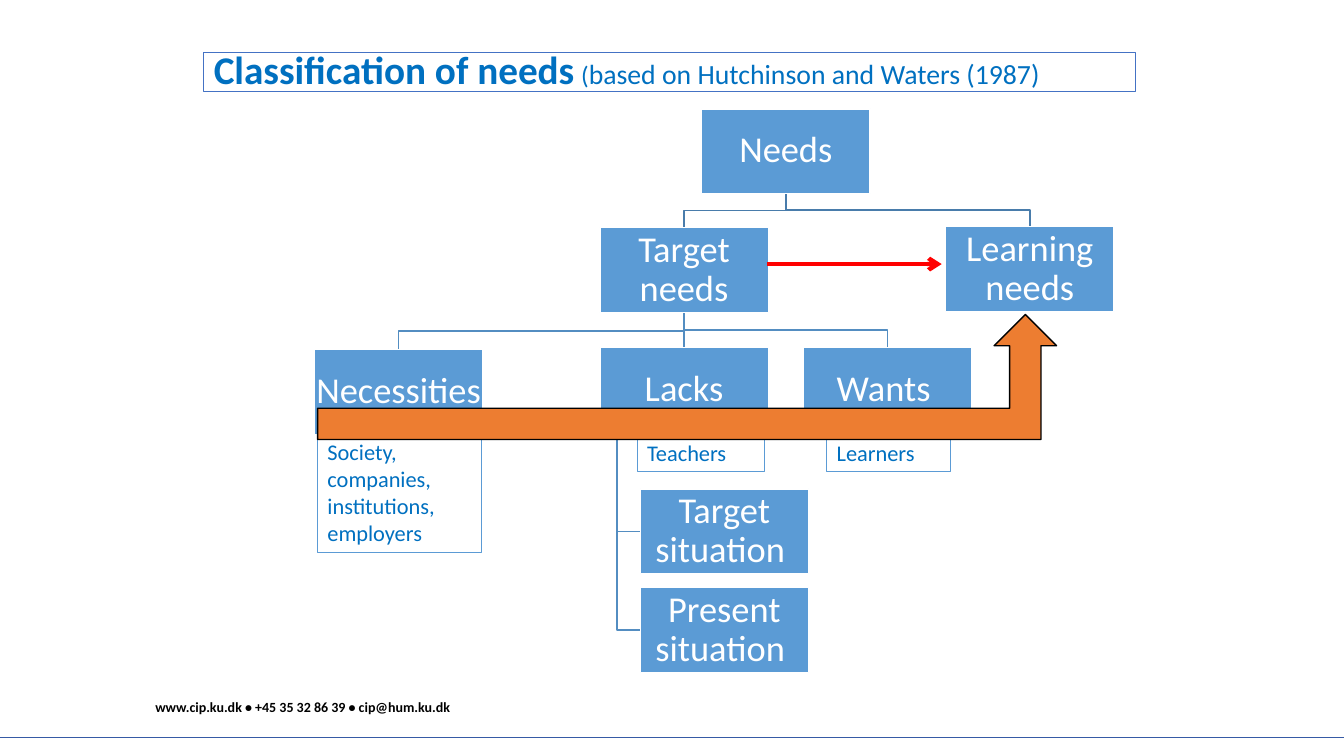
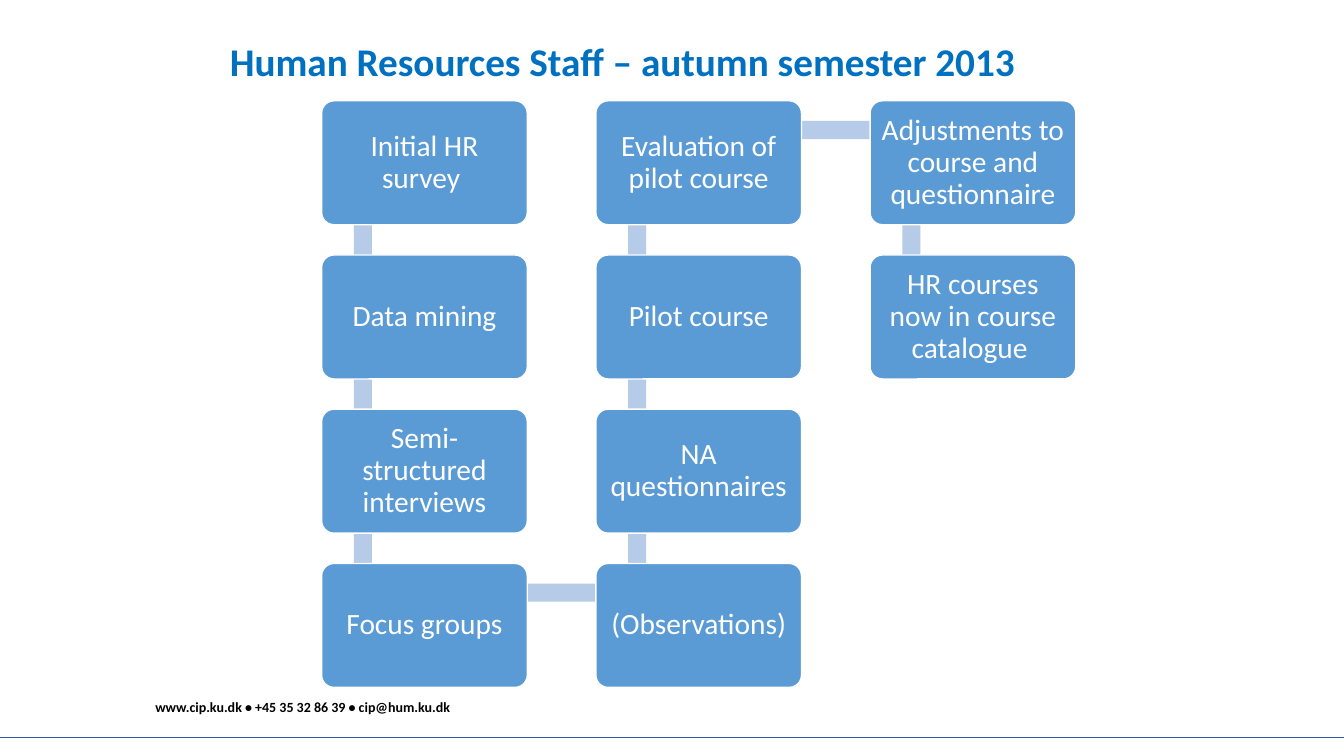
from dataclasses import dataclass
from itertools import pairwise

from lxml import etree
from pptx import Presentation
from pptx.dml.color import RGBColor
from pptx.enum.shapes import MSO_CONNECTOR, MSO_SHAPE
from pptx.enum.text import MSO_ANCHOR, MSO_AUTO_SIZE, PP_ALIGN
from pptx.oxml.ns import qn
from pptx.util import Inches, Pt

STRAIGHT = MSO_CONNECTOR.STRAIGHT
RECTANGLE = MSO_SHAPE.RECTANGLE
ROUNDED = MSO_SHAPE.ROUNDED_RECTANGLE
BENT_ARROW = MSO_SHAPE.BENT_UP_ARROW
MIDDLE = MSO_ANCHOR.MIDDLE
LEFT, CENTER = PP_ALIGN.LEFT, PP_ALIGN.CENTER
FIXED_SIZE = MSO_AUTO_SIZE.NONE


@dataclass(frozen=True)
class Theme:
    font: str = "Calibri"
    white: RGBColor = RGBColor.from_string("FFFFFF")
    black: RGBColor = RGBColor.from_string("000000")
    heading: RGBColor = RGBColor.from_string("0070C0")
    title_border: RGBColor = RGBColor.from_string("4472C4")
    rule: RGBColor = RGBColor.from_string("365AA5")
    box: RGBColor = RGBColor.from_string("5B9BD5")
    top_branch: RGBColor = RGBColor.from_string("497CAB")
    branch: RGBColor = RGBColor.from_string("538DC1")
    link: RGBColor = RGBColor.from_string("B5CBE7")
    red: RGBColor = RGBColor.from_string("FF0000")
    orange: RGBColor = RGBColor.from_string("ED7D31")
    title_size: Pt = Pt(28)
    space_size: Pt = Pt(21.6)
    bracket_size: Pt = Pt(18)
    source_size: Pt = Pt(19.8)
    node_size: Pt = Pt(26)
    step_size: Pt = Pt(21)
    note_size: Pt = Pt(16)
    footer_size: Pt = Pt(10)


theme = Theme()


def add_block(page, kind, at, fill, border=None, text="", size=None, inset=0):
    """Add a filled preset shape, with centred white text if there is any."""
    block = page.shapes.add_shape(kind, *map(Inches, at))
    block.shadow.inherit = False
    block.fill.solid()
    block.fill.fore_color.rgb = fill
    if border is None:
        block.line.fill.background()
    else:
        block.line.color.rgb = border
        block.line.width = Pt(1)
    if text:
        frame = block.text_frame
        frame.word_wrap = True
        frame.vertical_anchor = MIDDLE
        frame.margin_left = frame.margin_right = Inches(inset)
        frame.margin_top = frame.margin_bottom = Inches(inset)
        para = frame.paragraphs[0]
        para.text = text
        para.alignment = CENTER
        para.line_spacing = 0.9
        para.font.name = theme.font
        para.font.size = size
        para.font.color.rgb = theme.white
    return block


def add_line(page, start, end, color, width):
    line = page.shapes.add_connector(STRAIGHT, *map(Inches, (*start, *end)))
    line.line.color.rgb = color
    line.line.width = Pt(width)
    etree.SubElement(line.element.spPr, qn("a:effectLst"))
    return line


deck = Presentation()
deck.slide_width, deck.slide_height = Inches(13.33), Inches(7.5)
layout = deck.slide_layouts[5]
for holder in list(layout.placeholders)[1:]:
    layout.shapes.element.remove(holder.element)

# Titles
titles = [
    ((2.02, 0.52, 9.24, 0.39), [
        ("Classification of needs", theme.title_size, True),
        (" ", theme.space_size, True),
        ("(", theme.bracket_size, False),
        ("based on Hutchinson and Waters (1987)", theme.source_size, False),
    ]),
    ((2.18, 0.44, 8.99, 0.39), [
        ("Human Resources Staff – autumn semester 2013", theme.title_size, True),
    ]),
]
pages = []
for at, parts in titles:
    page = deck.slides.add_slide(layout)
    pages.append(page)
    title = page.shapes.title
    title.left, title.top, title.width, title.height = map(Inches, at)
    title.text_frame.auto_size = FIXED_SIZE
    title.text_frame.vertical_anchor = MIDDLE
    para = title.text_frame.paragraphs[0]
    para.alignment = LEFT
    para.line_spacing = 0.9
    for text, size, bold in parts:
        span = para.add_run()
        span.text = text
        span.font.name = theme.font
        span.font.size = size
        span.font.bold = bold
        span.font.color.rgb = theme.heading
needs_page, staff_page = pages
needs_page.shapes.title.line.color.rgb = theme.title_border
needs_page.shapes.title.line.width = Pt(0.75)

# Footer and rule, moved to the layout that both slides use
rule = add_line(needs_page, (0, 7.32), (13.33, 7.32), theme.rule, 0.75)
footer = needs_page.shapes.add_textbox(*map(Inches, (1.54, 6.91, 10.48, 0.19)))
frame = footer.text_frame
frame.word_wrap = True
frame.margin_left = frame.margin_right = frame.margin_top = frame.margin_bottom = 0
para = frame.paragraphs[0]
para.text = "www.cip.ku.dk • +45 35 32 86 39 • cip@hum.ku.dk"
para.line_spacing = 1.1
para.font.name = theme.font
para.font.size = theme.footer_size
para.font.bold = True
para.font.color.rgb = theme.black
for part in (rule, footer):
    layout.shapes.element.append(part.element)

# Tree of needs
NODE_W, NODE_H = 1.67, 0.84
nodes = {
    "Needs": (6.96, 1.08),
    "Target needs": (5.95, 2.26),
    "Learning needs": (9.38, 2.25),
    "Necessities ": (3.12, 3.47),
    "Lacks": (5.95, 3.45),
    "Wants ": (7.97, 3.45),
    "Target situation ": (6.35, 4.85),
    "Present situation ": (6.35, 5.83),
}
branches = [
    ("Needs", "Learning needs", theme.top_branch),
    ("Needs", "Target needs", theme.top_branch),
    ("Target needs", "Wants ", theme.branch),
    ("Target needs", "Lacks", theme.branch),
    ("Target needs", "Necessities ", theme.branch),
    ("Lacks", "Present situation ", theme.branch),
    ("Lacks", "Target situation ", theme.branch),
]
for parent, child, color in branches:
    parent_left, parent_top = nodes[parent]
    left, top = nodes[child]
    start = (parent_left + NODE_W / 2, parent_top + NODE_H)
    end = (left + NODE_W / 2, top)
    if parent == "Lacks":
        start = (parent_left + 0.17, start[1])
        end = (left, top + NODE_H / 2)
        corners = [(start[0], end[1])]
    elif start[0] == end[0]:
        add_line(needs_page, start, end, color, 1)
        continue
    else:
        middle = (start[1] + end[1]) / 2
        corners = [(start[0], middle), (end[0], middle)]
    outline = needs_page.shapes.build_freeform(*map(Inches, start))
    points = [(Inches(x), Inches(y)) for x, y in (*corners, end)]
    outline.add_line_segments(points, close=False)
    branch = outline.convert_to_shape()
    branch.shadow.inherit = False
    branch.fill.background()
    branch.line.color.rgb = color
    branch.line.width = Pt(1)

for text, place in nodes.items():
    add_block(needs_page, RECTANGLE, (*place, NODE_W, NODE_H), theme.box,
              theme.white, text, theme.node_size)

notes = [
    ("Society, companies, institutions, employers", (3.15, 4.3, 1.63, 1.18)),
    ("Teachers", (6.32, 4.31, 1.26, 0.37)),
    ("Learners", (8.2, 4.31, 1.23, 0.37)),
]
for text, at in notes:
    note = needs_page.shapes.add_textbox(*map(Inches, at))
    note.line.color.rgb = theme.box
    note.line.width = Pt(0.75)
    note.text_frame.word_wrap = True
    para = note.text_frame.paragraphs[0]
    para.text = text
    para.font.name = theme.font
    para.font.size = theme.note_size
    para.font.color.rgb = theme.heading

red_arrow = add_line(needs_page, (7.61, 2.62), (9.34, 2.62), theme.red, 3)
red_line = red_arrow.element.spPr.find(qn("a:ln"))
etree.SubElement(red_line, qn("a:tailEnd"), type="arrow")
add_block(needs_page, BENT_ARROW, (3.15, 3.12, 7.33, 1.24), theme.orange, theme.black)

# Course steps, running down and up the columns
STEP_W, STEP_H, ROWS = 2.04, 1.23, 4
COLUMN_PITCH, ROW_PITCH, BAR = 2.72, 1.53, 0.18
steps = [
    "Initial HR survey ", "Data mining", "Semi-structured interviews", "Focus groups",
    "(Observations)", "NA questionnaires", "Pilot course", "Evaluation of pilot course",
    "Adjustments to course and questionnaire", "HR courses now in course catalogue ",
]
places = []
for index in range(len(steps)):
    column, row = divmod(index, ROWS)
    if column % 2:
        row = ROWS - 1 - row
    places.append((3.19 + column * COLUMN_PITCH, 1 + row * ROW_PITCH))

for (left, top), (next_left, next_top) in pairwise(places):
    if left == next_left:
        at = (left + 0.32, min(top, next_top) + 0.3, BAR, ROW_PITCH)
    else:
        at = (left + 0.42, top + 0.2, COLUMN_PITCH, BAR)
    add_block(staff_page, RECTANGLE, at, theme.link)

for text, place in zip(steps, places):
    step = add_block(staff_page, ROUNDED, (*place, STEP_W, STEP_H), theme.box,
                     theme.white, text, theme.step_size, inset=0.08)
    step.adjustments[0] = 0.1

deck.save("out.pptx")
